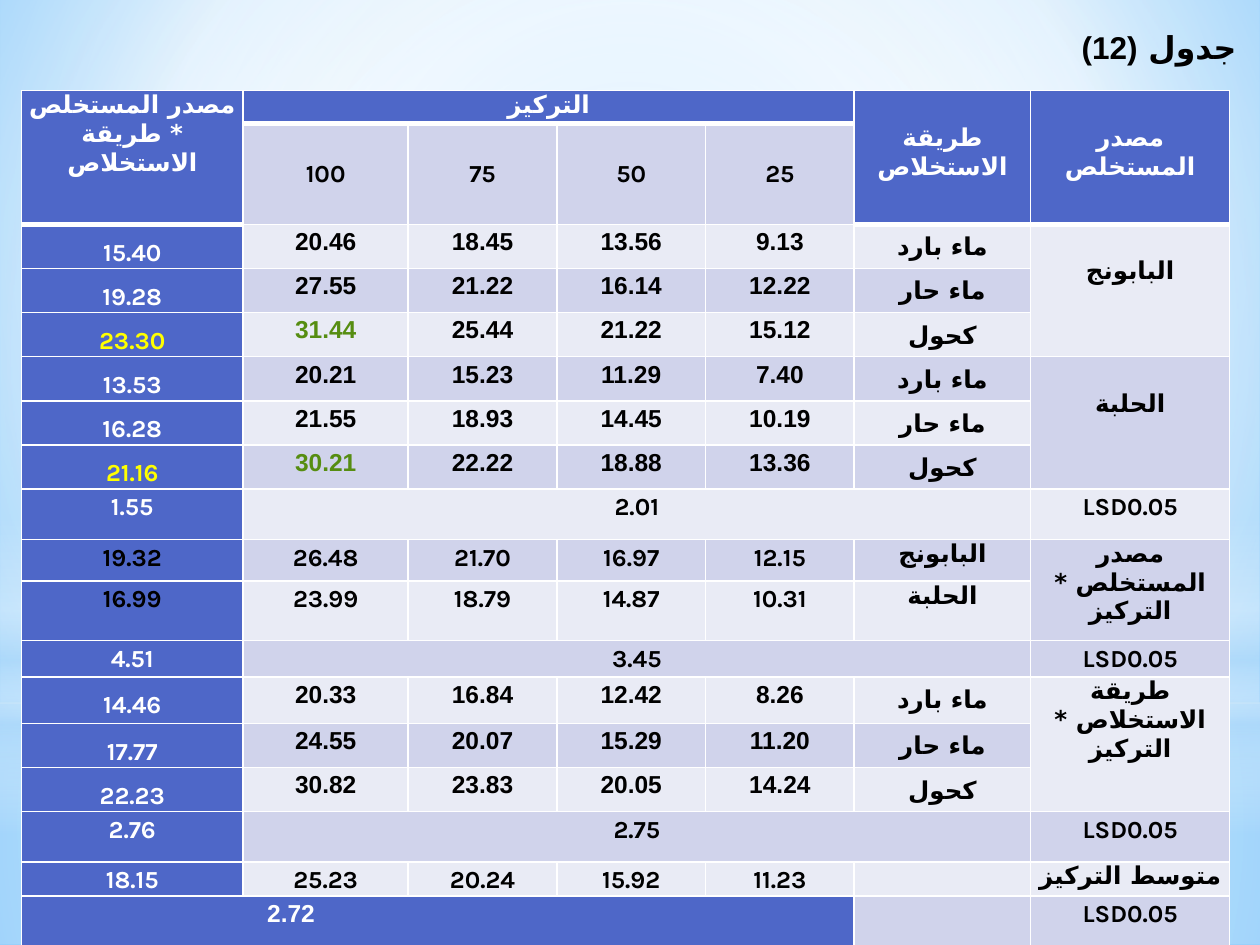
from typing import NamedTuple, Optional

from lxml import etree
from pptx import Presentation
from pptx import util as u
from pptx.dml.color import RGBColor
from pptx.enum import shapes, text
from pptx.oxml import ns

FONT, DIGIT_FONT, ARABIC_FONT = "Karla", "Arial", "DejaVu Sans"
WHITE, BLACK, YELLOW, GREEN = "FFFFFF", "000000", "FFFF00", "568D11"
HEADER, BANDS = "4E67C8", ("E9EBF5", "D0D3EB")
SKY = "B4DCFA"
CELL_FORMAT = {
    "margin_left": u.Inches(0.05), "margin_right": u.Inches(0.05),
    "margin_top": 0, "margin_bottom": 0,
    "vertical_anchor": text.MSO_ANCHOR.TOP,
}


class Stop(NamedTuple):
    position: int
    color: str
    opacity: int = 100


class Glow(NamedTuple):
    outline: shapes.MSO_SHAPE
    top: float
    height: float
    stops: list[Stop]
    center: Optional[tuple[int, ...]] = (50, 50, 50, 50)


class Row(NamedTuple):
    height: float
    cells: tuple[str, ...]
    measured: bool = False


BACKDROP = [Stop(0, "9ED5FF"), Stop(60, WHITE), Stop(100, "5BB9FF")]
GLOWS = [
    Glow(shapes.MSO_SHAPE.RECTANGLE, 5.58, 1.92,
         [Stop(0, WHITE, 91), Stop(37, WHITE, 76), Stop(100, SKY, 79)]),
    Glow(shapes.MSO_SHAPE.RECTANGLE, 0, 5.58,
         [Stop(0, WHITE, 89), Stop(48, WHITE, 62), Stop(100, SKY, 79)]),
    Glow(shapes.MSO_SHAPE.RECTANGLE, 4.12, 2.5,
         [Stop(0, WHITE, 0), Stop(29, WHITE, 30), Stop(45, SKY, 40),
          Stop(55, WHITE, 26), Stop(65, SKY, 60), Stop(100, WHITE, 0)], None),
    Glow(shapes.MSO_SHAPE.OVAL, 1.75, 5.58, [Stop(0, WHITE), Stop(56, WHITE, 0)]),
]

COLUMNS = (1.76, 1.31, 1.18, 1.18, 1.18, 1.4, 1.58)
COLD, HOT, ALCOHOL = "ماء بارد", "ماء حار", "كحول"
CHAMOMILE, FENUGREEK, LSD = "البابونج", "الحلبة", "LSD0.05"
ROWS = [
    Row(0.26, ("مصدر المستخلص * طريقة الاستخلاص", "التركيز", "", "", "",
               "طريقة الاستخلاص", "مصدر المستخلص")),
    Row(0.8, ("", "100", "75", "50", "25", "", "")),
    Row(0.34, ("15.40", "20.46", "18.45", "13.56", "9.13", COLD, CHAMOMILE), True),
    Row(0.34, ("19.28", "27.55", "21.22", "16.14", "12.22", HOT, ""), True),
    Row(0.34, ("23.30", "31.44", "25.44", "21.22", "15.12", ALCOHOL, ""), True),
    Row(0.34, ("13.53", "20.21", "15.23", "11.29", "7.40", COLD, FENUGREEK), True),
    Row(0.34, ("16.28", "21.55", "18.93", "14.45", "10.19", HOT, ""), True),
    Row(0.34, ("21.16", "30.21", "22.22", "18.88", "13.36", ALCOHOL, ""), True),
    Row(0.4, ("1.55", "2.01", "", "", "", "", LSD)),
    Row(0.33, ("19.32", "26.48", "21.70", "16.97", "12.15", CHAMOMILE,
               "مصدر المستخلص * التركيز")),
    Row(0.47, ("16.99", "23.99", "18.79", "14.87", "10.31", FENUGREEK, "")),
    Row(0.29, ("4.51", "3.45", "", "", "", "", LSD)),
    Row(0.37, ("14.46", "20.33", "16.84", "12.42", "8.26", COLD,
               "طريقة الاستخلاص * التركيز"), True),
    Row(0.34, ("17.77", "24.55", "20.07", "15.29", "11.20", HOT, ""), True),
    Row(0.34, ("22.23", "30.82", "23.83", "20.05", "14.24", ALCOHOL, ""), True),
    Row(0.4, ("2.76", "2.75", "", "", "", "", LSD)),
    Row(0.26, ("18.15", "25.23", "20.24", "15.92", "11.23", "", "متوسط التركيز")),
    Row(0.41, ("2.72", "", "", "", "", "", LSD)),
]
TOTAL_LSD = len(ROWS) - 1
MERGES = [
    ((0, 0), (1, 0)), ((0, 1), (0, 4)), ((0, 5), (1, 5)), ((0, 6), (1, 6)),
    ((2, 6), (4, 6)), ((5, 6), (7, 6)), ((9, 6), (10, 6)), ((12, 6), (14, 6)),
    *(((row, 1), (row, 5)) for row in (8, 11, 15)),
    ((TOTAL_LSD, 0), (TOTAL_LSD, 4)),
]
HIGHLIGHTS = {(4, 0): YELLOW, (7, 0): YELLOW, (4, 1): GREEN, (7, 1): GREEN,
              (9, 0): BLACK, (10, 0): BLACK}
LOWERED = {(0, 5), (0, 6), (2, 6), (5, 6), *((1, column) for column in range(1, 5))}


def rgb(color: str) -> RGBColor:
    return RGBColor.from_string(color)


def apply_format(target, values: dict) -> None:
    for name, value in values.items():
        setattr(target, name, value)


def add_child(parent, tag: str, **attributes):
    return etree.SubElement(parent, ns.qn(tag), {k: str(v) for k, v in attributes.items()})


def is_arabic(wording: str) -> bool:
    return any("\u0600" <= letter <= "\u06FF" for letter in wording)


def paint_gradient(properties, stops: list[Stop], center) -> None:
    gradient = etree.Element(ns.qn("a:gradFill"), rotWithShape="1")
    stop_list = add_child(gradient, "a:gsLst")
    for stop in stops:
        mark = add_child(stop_list, "a:gs", pos=stop.position * 1000)
        color = add_child(mark, "a:srgbClr", val=stop.color)
        if stop.opacity < 100:
            add_child(color, "a:alpha", val=stop.opacity * 1000)
    if center:
        focus = add_child(gradient, "a:path", path="circle")
        add_child(focus, "a:fillToRect",
                  **{side: share * 1000 for side, share in zip("ltrb", center)})
    else:
        add_child(gradient, "a:lin", ang=90 * 60000, scaled=0)
    properties.replace(properties.find(ns.qn("a:noFill")), gradient)


def draw_glow(slide, glow: Glow) -> None:
    haze = slide.shapes.add_shape(glow.outline, 0, u.Inches(glow.top),
                                  u.Inches(10), u.Inches(glow.height))
    haze.shadow.inherit = False
    haze.fill.background()
    paint_gradient(haze.element.spPr, glow.stops, glow.center)
    haze.line.fill.background()


def write(paragraph, wording: str, size: int, color: str, font: str = FONT) -> None:
    run = paragraph.add_run()
    run.text = wording
    apply_format(run.font, {"size": u.Pt(size), "bold": True, "name": font})
    run.font.color.rgb = rgb(color)
    add_child(run.font._element, "a:cs",
              typeface=ARABIC_FONT if is_arabic(wording) else DIGIT_FONT)


def draw_borders(cell, row: int, column: int) -> None:
    under_header = row == (1 if 1 <= column <= 4 else 2)
    widths = {"L": 1, "R": 1, "T": 3 if under_header else 1, "B": 3 if row == 0 else 1}
    for side, width in widths.items():
        line = add_child(cell._tc.get_or_add_tcPr(), f"a:ln{side}", w=u.Pt(width))
        add_child(add_child(line, "a:solidFill"), "a:srgbClr", val=WHITE)


def line_spacing(wording: str, tall: bool) -> float:
    if is_arabic(wording):
        return 1.3 if tall else 1.0
    return 1.5 if tall else 1.15


def draw_cell(cell, row: int, column: int) -> None:
    place, wording, measured = (row, column), ROWS[row].cells[column], ROWS[row].measured
    in_header = row == 0 or column == 0
    apply_format(cell, CELL_FORMAT)
    if place in LOWERED:
        cell.margin_top = u.Inches(0.26)
    draw_borders(cell, row, column)
    cell.fill.solid()
    cell.fill.fore_color.rgb = rgb(HEADER if in_header else BANDS[row % 2])
    paragraph = cell.text_frame.paragraphs[0]
    if not wording:
        paragraph._p.get_or_add_endParaRPr().set("sz", "1400")
        return
    paragraph.alignment = text.PP_ALIGN.CENTER
    paragraph.line_spacing = line_spacing(wording, measured and column in (0, 5))
    font = FONT
    if measured and 1 <= column <= 4:
        paragraph._p.get_or_add_pPr().set("rtl", "1")
    elif place == (TOTAL_LSD, 0):
        paragraph.alignment = text.PP_ALIGN.LEFT
        paragraph._p.get_or_add_pPr().set("marL", str(u.Inches(1.9)))
        font = DIGIT_FONT
    write(paragraph, wording, 14,
          HIGHLIGHTS.get(place, WHITE if in_header else BLACK), font)


def draw_results(slide) -> None:
    results = slide.shapes.add_table(
        len(ROWS), len(COLUMNS), u.Inches(0.17), u.Inches(0.72),
        u.Inches(sum(COLUMNS)), u.Inches(sum(row.height for row in ROWS))).table
    for column, width in zip(results.columns, COLUMNS):
        column.width = u.Inches(width)
    for row, content in enumerate(ROWS):
        results.rows[row].height = u.Inches(content.height)
        for column in range(len(COLUMNS)):
            draw_cell(results.cell(row, column), row, column)
    for first, last in MERGES:
        results.cell(*first).merge(results.cell(*last))


def main() -> None:
    deck = Presentation()
    apply_format(deck, {"slide_width": u.Inches(10), "slide_height": u.Inches(7.5)})
    slide = deck.slides.add_slide(deck.slide_layouts[6])
    slide.background.fill.background()
    paint_gradient(slide.element.find(".//" + ns.qn("p:bgPr")), BACKDROP, (20, 10, 20, 60))
    for glow in GLOWS:
        draw_glow(slide, glow)
    caption = slide.shapes.add_textbox(u.Inches(0.33), u.Inches(0.17),
                                       u.Inches(9.58), u.Inches(0.71)).text_frame
    caption.word_wrap = True
    caption.paragraphs[0].alignment = text.PP_ALIGN.RIGHT
    for wording in ("جدول ", "(12)"):
        write(caption.paragraphs[0], wording, 18, BLACK)
    draw_results(slide)
    deck.save("out.pptx")


if __name__ == "__main__":
    main()
